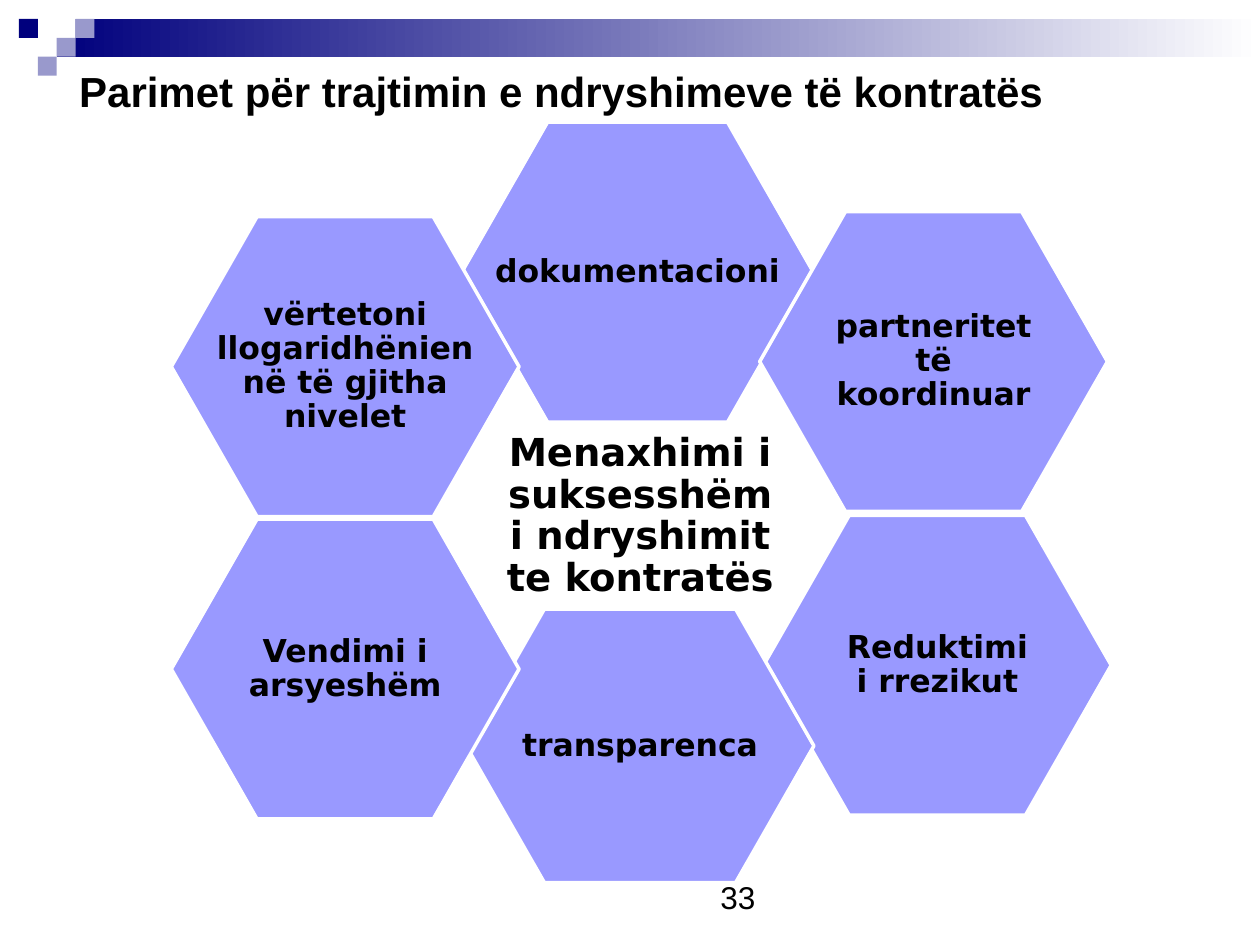
from pptx import Presentation
from pptx.dml.color import RGBColor
from pptx.enum.shapes import MSO_SHAPE as SHAPE
from pptx.enum.text import MSO_ANCHOR as ANCHOR, PP_ALIGN as ALIGN
from pptx.util import Inches, Pt

# Slide grid: 10 columns by 7.5 rows, one inch each
COLS, ROWS = 10, 7.5
CELL = 0.15  # side of a corner square
NAVY, LILAC, VIOLET, WHITE, BLACK = "00007D", "9999CC", "9999FF", "FFFFFF", "000000"
HEX_W, HEX_H = 2.76, 2.38

# Corner squares: column, row, colour
SQUARES = [(1, 1, NAVY), (3, 1, WHITE), (4, 1, LILAC), (3, 2, LILAC), (2, 3, LILAC)]

# Hexagons: centre x, centre y, width, height, text width, text
PRINCIPLES = [
    (5.06, 2.16, 2.79, HEX_H, 2.33, "dokumentacioni"),
    (7.41, 2.87, HEX_W, HEX_H, 1.77, "partneritet të koordinuar"),
    (7.44, 5.28, HEX_W, HEX_H, 1.57, "Reduktimi i rrezikut"),
    (5.08, 5.92, HEX_W, 2.17, 2.1, "transparenca"),
    (2.74, 5.31, HEX_W, HEX_H, 1.57, "Vendimi i arsyeshëm"),
    (2.74, 2.91, HEX_W, HEX_H, 2.13, "vërtetoni llogaridhënien në të gjitha nivelet"),
]


def rgb(code):
    return RGBColor.from_string(code)


def add_shape(s, kind, x, y, w, h, fill=None):
    sp = s.shapes.add_shape(kind, Inches(x), Inches(y), Inches(w), Inches(h))
    sp.shadow.inherit = False
    sp.line.fill.background()
    if fill:
        sp.fill.solid()
        sp.fill.fore_color.rgb = rgb(fill)
    return sp


def add_text(s, x, y, w, h, text, size, font="Arial", bold=False):
    tb = s.shapes.add_textbox(Inches(x), Inches(y), Inches(w), Inches(h))
    tf = tb.text_frame
    tf.word_wrap = True
    p = tf.paragraphs[0]
    p.text = text
    p.font.size, p.font.name, p.font.bold = Pt(size), font, bold
    p.font.color.rgb = rgb(BLACK)
    return tf


def add_label(s, cx, cy, w, h, text, size):
    """Bold centred text around a centre point."""
    tf = add_text(s, cx - w / 2, cy - h / 2, w, h, text, size, "DejaVu Sans", True)
    tf.vertical_anchor = ANCHOR.MIDDLE
    tf.margin_left = tf.margin_right = tf.margin_top = tf.margin_bottom = Inches(0.01)
    p = tf.paragraphs[0]
    p.alignment, p.line_spacing = ALIGN.CENTER, 0.9


def add_hexagon(s, cx, cy, w, h, text_w, text):
    sp = add_shape(s, SHAPE.HEXAGON, cx - w / 2, cy - h / 2, w, h, VIOLET)
    sp.adjustments[0] = 0.286
    sp.line.color.rgb = rgb(WHITE)
    sp.line.width = Pt(2)
    add_label(s, cx, cy, text_w, h / 2, text, 18)


def add_banner(s):
    left = 3 * CELL
    bar = add_shape(s, SHAPE.RECTANGLE, left, CELL, COLS - left, 2 * CELL)
    bar.fill.gradient()
    bar.fill.gradient_angle = 0
    for stop, position, color in zip(bar.fill.gradient_stops, (0, 1), (NAVY, WHITE)):
        stop.position = position
        stop.color.rgb = rgb(color)
    for col, row, color in SQUARES:
        add_shape(s, SHAPE.RECTANGLE, col * CELL, row * CELL, CELL, CELL, color)


def main():
    prs = Presentation()
    prs.slide_width, prs.slide_height = Inches(COLS), Inches(ROWS)
    s = prs.slides.add_slide(prs.slide_layouts[6])

    # Banner, page number and title
    add_banner(s)
    add_text(s, 5.62, 6.92, 0.64, 0.4, "33", 18)
    add_text(s, 0.53, 0.47, 8.02, 0.5,
             "Parimet për trajtimin e ndryshimeve të kontratës", 24, bold=True)

    # Ring of principles around the central theme
    add_label(s, 5.08, 4.1, 2.28, 0.82,
              "Menaxhimi i suksesshëm i ndryshimit te kontratës", 22)
    for principle in PRINCIPLES:
        add_hexagon(s, *principle)

    prs.save("out.pptx")


if __name__ == "__main__":
    main()
